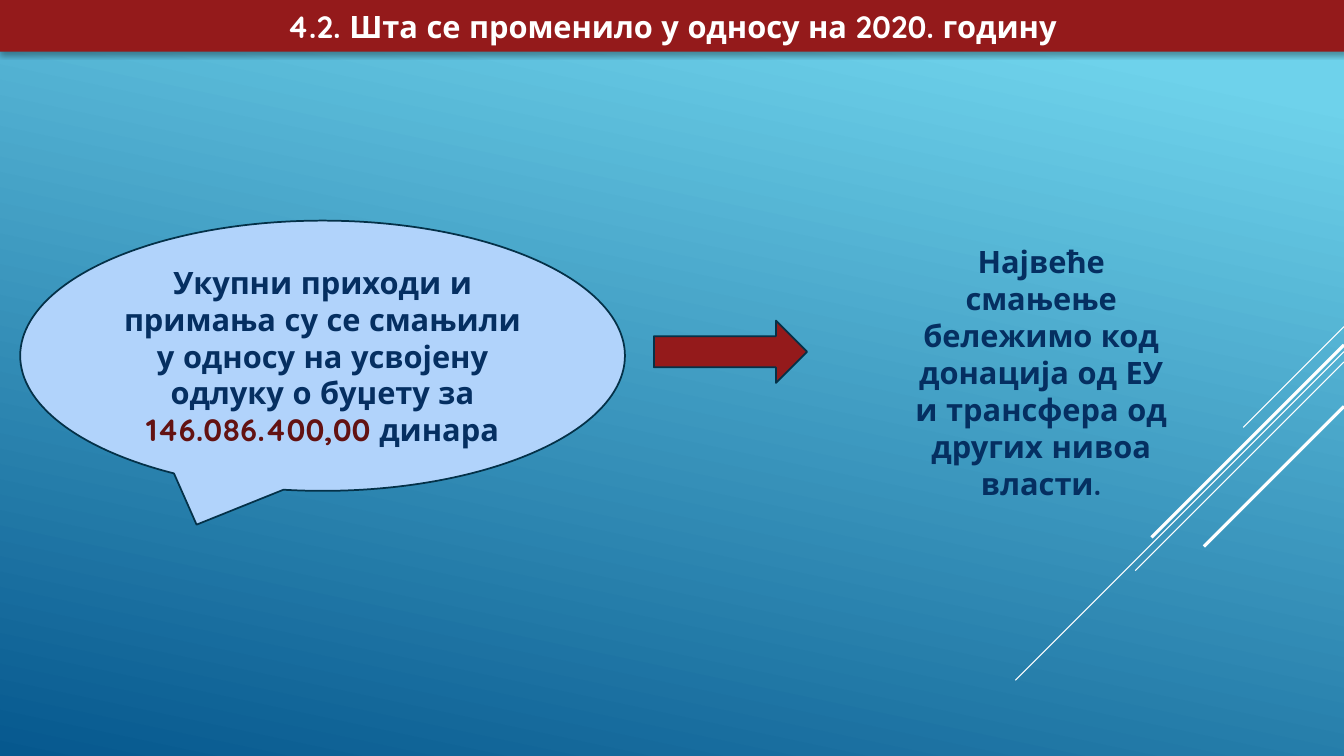
import dataclasses

import lxml.etree
import pptx
import pptx.dml.color
import pptx.enum.shapes
import pptx.enum.text
import pptx.oxml
import pptx.oxml.ns
import pptx.util

Cm = pptx.util.Cm
Pt = pptx.util.Pt
Shapes = pptx.enum.shapes.MSO_SHAPE
qn = pptx.oxml.ns.qn

COLOURS = {
    "sky": "6ED2EB", "deep": "06588E", "white": "FFFFFF", "red": "941A1B",
    "bubble": "B1D3FB", "outline": "043148", "navy": "052F61", "maroon": "631212",
}
FONT = "Quicksand"
SLIDE_WIDTH, SLIDE_HEIGHT = 33.87, 19.05
TITLE_SHADOW = (
    '<a:effectLst xmlns:a="http://schemas.openxmlformats.org/drawingml/2006/main">'
    '<a:outerShdw blurRad="44450" dist="27940" dir="5400000" rotWithShape="0">'
    '<a:srgbClr val="000000"><a:alpha val="32000"/></a:srgbClr>'
    '</a:outerShdw></a:effectLst>'
)


@dataclasses.dataclass
class Ray:
    top: float
    run: float
    weight: float


@dataclasses.dataclass
class Phrase:
    text: str
    colour: str


@dataclasses.dataclass
class Figure:
    kind: Shapes
    left: float
    top: float
    width: float
    height: float
    fill: str = ""
    phrases: tuple[Phrase, ...] = ()


RAYS = (
    Ray(8.23, 2.54, 0.75), Ray(8.86, 8.28, 0.75), Ray(9.12, 5.26, 0.75),
    Ray(8.69, 4.85, 2.25), Ray(10.24, 3.53, 2.25),
)
FIGURES = (
    Figure(Shapes.OVAL_CALLOUT, 0.51, 5.56, 15.24, 6.81, "bubble", (
        Phrase("Укупни приходи и примања су се смањили у односу на усвојену "
               "одлуку о буџету за ", "navy"),
        Phrase("146.086.400,00", "maroon"),
        Phrase(" динара", "navy"),
    )),
    Figure(Shapes.RIGHT_ARROW, 16.48, 8.08, 3.86, 1.57, "red"),
    Figure(Shapes.TEAR, 21.11, 5.31, 10.26, 8.15, "", (
        Phrase("Највеће смањење бележимо код донација од ЕУ и трансфера од "
               "других нивоа власти.", "navy"),
    )),
)


def rgb(name: str) -> pptx.dml.color.RGBColor:
    """Return the named colour."""
    return pptx.dml.color.RGBColor.from_string(COLOURS[name])


def write(shape, phrases: tuple[Phrase, ...]) -> None:
    """Write centred bold phrases into a shape."""
    frame = shape.text_frame
    frame.word_wrap = True
    frame.auto_size = pptx.enum.text.MSO_AUTO_SIZE.NONE
    frame.vertical_anchor = pptx.enum.text.MSO_ANCHOR.MIDDLE
    paragraph = frame.paragraphs[0]
    paragraph.alignment = pptx.enum.text.PP_ALIGN.CENTER
    paragraph.line_spacing = Pt(26.4)
    for phrase in phrases:
        run = paragraph.add_run()
        run.text = phrase.text
        run.font.name = FONT
        run.font.size = Pt(22)
        run.font.bold = True
        run.font.color.rgb = rgb(phrase.colour)


def paint_background(slide) -> None:
    """Fill the slide with the slanted blue gradient."""
    fill = slide.background.fill
    fill.gradient()
    fill.gradient_angle = 258
    for stop, colour, position in zip(fill.gradient_stops, ("sky", "deep"), (0.1, 1)):
        stop.color.rgb = rgb(colour)
        stop.position = position


def draw_ray(slide, ray: Ray) -> None:
    """Draw a 45-degree line running down from the right edge."""
    line = slide.shapes.add_connector(
        pptx.enum.shapes.MSO_CONNECTOR.STRAIGHT, Cm(SLIDE_WIDTH), Cm(ray.top),
        Cm(SLIDE_WIDTH - ray.run), Cm(ray.top + ray.run))
    line.line.color.rgb = rgb("white")
    line.line.width = Pt(ray.weight)
    lxml.etree.SubElement(line._element.spPr, qn("a:effectLst"))


def draw_title(slide) -> None:
    """Turn the title placeholder into a rounded red banner."""
    title = slide.shapes.title
    title.left, title.top = Cm(0), Cm(0)
    title.width, title.height = Cm(SLIDE_WIDTH), Cm(1.3)
    properties = title._element.spPr
    geometry = lxml.etree.SubElement(properties, qn("a:prstGeom"), prst="roundRect")
    lxml.etree.SubElement(geometry, qn("a:avLst"))
    title.fill.solid()
    title.fill.fore_color.rgb = rgb("red")
    properties.append(pptx.oxml.parse_xml(TITLE_SHADOW))
    write(title, (Phrase("4.2. Шта се променило у односу на 2020. годину", "white"),))


def draw_figure(slide, figure: Figure) -> None:
    """Draw a preset shape with its optional fill and text."""
    shape = slide.shapes.add_shape(
        figure.kind, Cm(figure.left), Cm(figure.top), Cm(figure.width), Cm(figure.height))
    shape.shadow.inherit = False
    if figure.fill:
        shape.fill.solid()
        shape.fill.fore_color.rgb = rgb(figure.fill)
        shape.line.color.rgb = rgb("outline")
        shape.line.width = Pt(1.25)
    else:
        shape.fill.background()
        shape.line.fill.background()
    if figure.phrases:
        write(shape, figure.phrases)


def main() -> None:
    """Build and save the slide."""
    deck = pptx.Presentation()
    deck.slide_width, deck.slide_height = Cm(SLIDE_WIDTH), Cm(SLIDE_HEIGHT)
    slide = deck.slides.add_slide(deck.slide_layouts[5])
    paint_background(slide)
    for ray in RAYS:
        draw_ray(slide, ray)
    draw_title(slide)
    for figure in FIGURES:
        draw_figure(slide, figure)
    deck.save("out.pptx")


if __name__ == "__main__":
    main()
